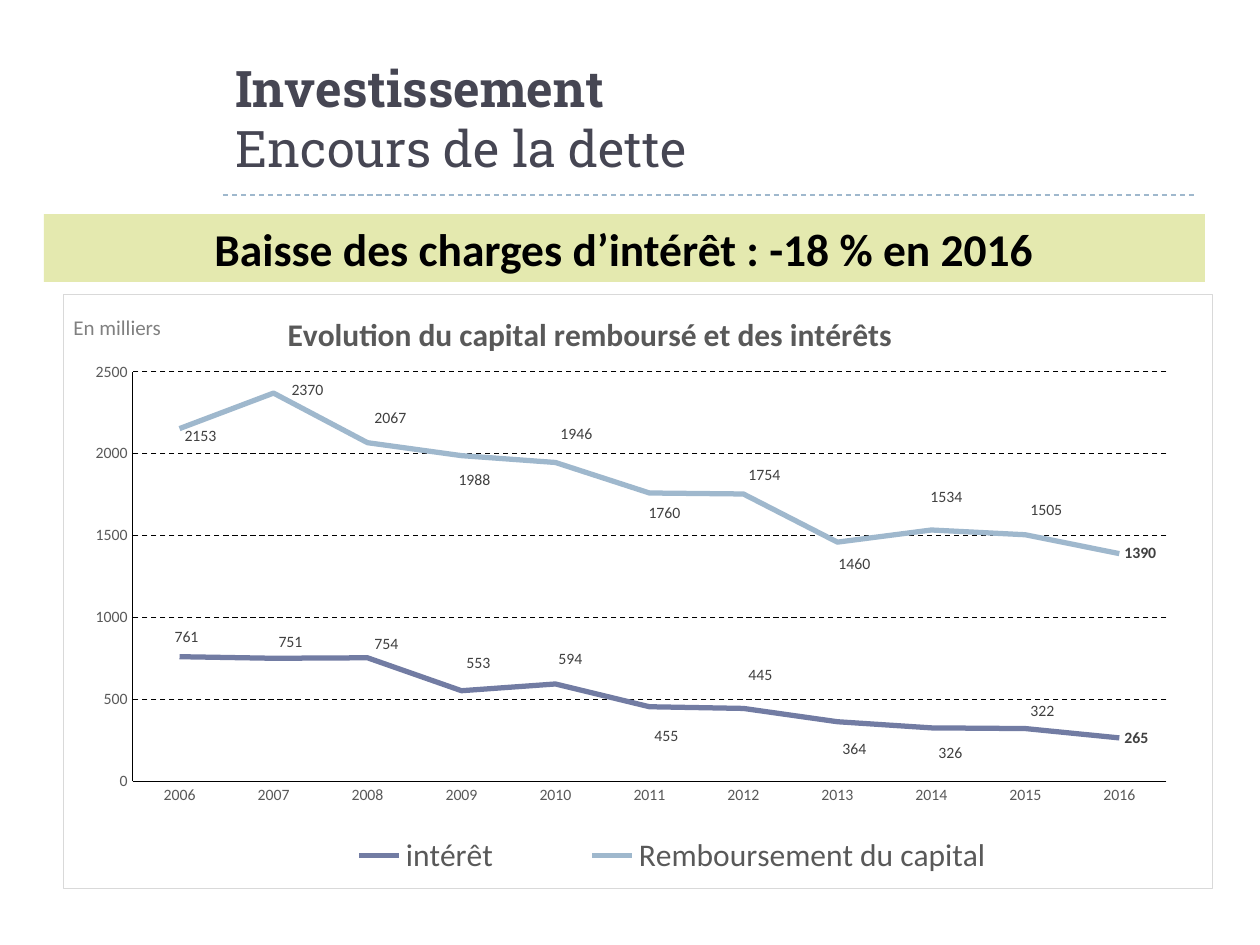
from lxml.etree import SubElement
from pptx import Presentation
from pptx.chart.data import CategoryChartData
from pptx.dml.color import RGBColor
from pptx.enum.chart import XL_CHART_TYPE, XL_LABEL_POSITION, XL_LEGEND_POSITION, XL_TICK_MARK
from pptx.enum.dml import MSO_LINE
from pptx.enum.shapes import MSO_CONNECTOR, MSO_SHAPE
from pptx.enum.text import MSO_ANCHOR, PP_ALIGN
from pptx.oxml import parse_xml
from pptx.oxml.ns import nsdecls, qn
from pptx.util import Pt

BLACK = RGBColor(0x00, 0x00, 0x00)
WHITE = RGBColor(0xFF, 0xFF, 0xFF)
SLATE = RGBColor(0x46, 0x46, 0x53)
INDIGO = RGBColor(0x72, 0x7C, 0xA3)
SKY = RGBColor(0x9F, 0xB8, 0xCD)
LIME = RGBColor(0xE4, 0xE9, 0xAF)
BORDER_GREY = RGBColor(0xD9, 0xD9, 0xD9)
LABEL_GREY = RGBColor(0x40, 0x40, 0x40)
AXIS_GREY = RGBColor(0x59, 0x59, 0x59)
UNIT_GREY = RGBColor(0x80, 0x80, 0x80)

# Content
HEADING = ("Investissement", "Encours de la dette")
MESSAGE = "Baisse des charges d’intérêt : -18 % en 2016"
UNIT = "En milliers"
CHART_TITLE = "Evolution du capital remboursé et des intérêts"
YEARS = [str(year) for year in range(2006, 2017)]
# Each point: value, then the label's shift in px from its place right of the point
SERIES = [
    ("intérêt", INDIGO, [
        (761, -10, -19), (751, 0, -16), (754, 2, -14), (553, 0, -28),
        (594, -2, -25), (455, 0, 30), (445, 0, -33), (364, 0, 28),
        (326, 2, 25), (322, 0, -17), (265, 0, 0)]),
    ("Remboursement du capital", SKY, [
        (2153, 0, 8), (2370, 13, -3), (2067, 2, -25), (1988, -8, 25),
        (1946, 0, -28), (1760, -6, 20), (1754, 0, -19), (1460, -4, 22),
        (1534, -6, -33), (1505, 0, -25), (1390, 0, 0)]),
]

# Places in px: left, top, width, height
SLIDE_W, SLIDE_H = 1260, 945
HEADING_BOX = (223, 48, 974, 136)
RULE_Y = 195
MESSAGE_BOX = (44, 214, 1161, 68)
CHART_BOX = (63, 294, 1150, 595)
UNIT_BOX = (61, 308, 179, 38)
CHART_W, CHART_H = CHART_BOX[2:]


def px(length):
    return round(length * 914400 / 126)


def box(place):
    return [px(length) for length in place]


def style(font, size, color, bold=False, name="Calibri"):
    font.name, font.size, font.bold = name, Pt(size), bold
    font.color.rgb = color


def add_run(paragraph, text, *look, **options):
    run = paragraph.add_run()
    run.text = text
    style(run.font, *look, **options)


def add_text_box(place):
    frame = slide.shapes.add_textbox(*box(place)).text_frame
    frame.word_wrap = True
    return frame


def set_layout(parent, index, **values):
    """Give a chart part a manual layout as the child at index."""
    for old in parent.findall(qn("c:layout")):
        parent.remove(old)
    layout = parse_xml(f"<c:layout {nsdecls('c')}><c:manualLayout/></c:layout>")
    for tag, value in values.items():
        SubElement(layout[0], qn(f"c:{tag}")).set("val", str(value))
    parent.insert(index, layout)


def hide_leader_lines(labels):
    for flag in labels.findall(qn("c:showLeaderLines")):
        flag.set("val", "0")
    labels.append(parse_xml(
        f'<c:extLst {nsdecls("c")}><c:ext uri="{{CE6537A1-D6FC-4f65-9D91-7224C49458BB}}">'
        '<c15:showLeaderLines val="0" '
        'xmlns:c15="http://schemas.microsoft.com/office/drawing/2012/chart"/>'
        '</c:ext></c:extLst>'))


prs = Presentation()
prs.slide_width, prs.slide_height = px(SLIDE_W), px(SLIDE_H)
slide = prs.slides.add_slide(prs.slide_layouts[6])

# Heading and dashed rule
heading = add_text_box(HEADING_BOX)
heading.vertical_anchor = MSO_ANCHOR.BOTTOM
heading_line = heading.paragraphs[0]
add_run(heading_line, HEADING[0], 28.8, SLATE, bold=True, name="Roboto Slab")
heading_line.add_line_break()
add_run(heading_line, HEADING[1], 28.8, SLATE, name="Roboto Slab")

rule = slide.shapes.add_connector(
    MSO_CONNECTOR.STRAIGHT, px(223), px(RULE_Y), px(1197), px(RULE_Y))
rule.line.color.rgb = SKY
rule.line.width = Pt(0.75)
rule.line.dash_style = MSO_LINE.DASH
SubElement(rule._element.spPr, qn("a:effectLst"))

# Key message band
band = slide.shapes.add_shape(MSO_SHAPE.RECTANGLE, *box(MESSAGE_BOX))
band.shadow.inherit = False
band.fill.solid()
band.fill.fore_color.rgb = LIME
band.line.fill.background()
band.text_frame.word_wrap = True
message = band.text_frame.paragraphs[0]
message.alignment = PP_ALIGN.CENTER
add_run(message, MESSAGE, 26, BLACK, bold=True)

# Line chart with its fill and border
debt = CategoryChartData()
debt.categories = YEARS
for name, _, points in SERIES:
    debt.add_series(name, [value for value, _, _ in points])
chart = slide.shapes.add_chart(XL_CHART_TYPE.LINE, *box(CHART_BOX), debt).chart
style(chart.font, 10, BLACK)
chart._chartSpace.find(qn("c:txPr")).addprevious(parse_xml(
    f'<c:spPr {nsdecls("c", "a")}><a:solidFill><a:srgbClr val="{WHITE}"/></a:solidFill>'
    f'<a:ln w="{Pt(0.75)}"><a:solidFill><a:srgbClr val="{BORDER_GREY}"/></a:solidFill></a:ln>'
    '</c:spPr>'))

chart.has_title = True
add_run(chart.chart_title.text_frame.paragraphs[0], CHART_TITLE, 18, AXIS_GREY, bold=True)
set_layout(chart.chart_title._element, 1, xMode="edge", yMode="edge", x=0.19, y=0.02)
plot_area = chart._chartSpace.chart.plotArea
set_layout(plot_area, 0, layoutTarget="inner", xMode="edge", yMode="edge",
           x=0.06, y=0.13, w=0.9, h=0.69)

chart.has_legend = True
legend = chart.legend
legend.position = XL_LEGEND_POSITION.RIGHT
legend.include_in_layout = False
style(legend.font, 18, AXIS_GREY)
set_layout(legend._element, 1, xMode="edge", yMode="edge", x=0.18, y=0.9, w=0.7, h=0.09)

# Axes and gridlines
for axis in (chart.category_axis, chart.value_axis):
    axis.major_tick_mark = axis.minor_tick_mark = XL_TICK_MARK.NONE
    style(axis.tick_labels.font, 9, AXIS_GREY)
    axis.format.line.color.rgb = BLACK
    axis.format.line.width = Pt(0.75)
scale = chart.value_axis
scale.minimum_scale, scale.maximum_scale, scale.major_unit = 0, 2500, 500
scale.has_major_gridlines = True
grid = scale.major_gridlines.format.line
grid.color.rgb = BLACK
grid.width = Pt(0.75)
grid.dash_style = MSO_LINE.DASH

# Curves and their shifted labels, the last one bold
chart.plots[0].vary_by_categories = False
for curve, (_, color, points) in zip(chart.plots[0].series, SERIES):
    curve.smooth = False
    curve.format.line.color.rgb = color
    curve.format.line.width = Pt(3)
    curve.data_labels.show_value = True
    curve.data_labels.position = XL_LABEL_POSITION.RIGHT
    style(curve.data_labels.font, 9, LABEL_GREY)
    for i, (_, dx, dy) in enumerate(points):
        label = curve.points[i].data_label
        style(label.font, 9, LABEL_GREY, bold=i == len(points) - 1)
        label.position = XL_LABEL_POSITION.RIGHT
        if dx or dy:
            set_layout(curve.data_labels._element.findall(qn("c:dLbl"))[i], 1,
                       x=dx / CHART_W, y=dy / CHART_H)
    hide_leader_lines(curve.data_labels._element)

# Unit note
add_run(add_text_box(UNIT_BOX).paragraphs[0], UNIT, 12, UNIT_GREY)

prs.save("out.pptx")
